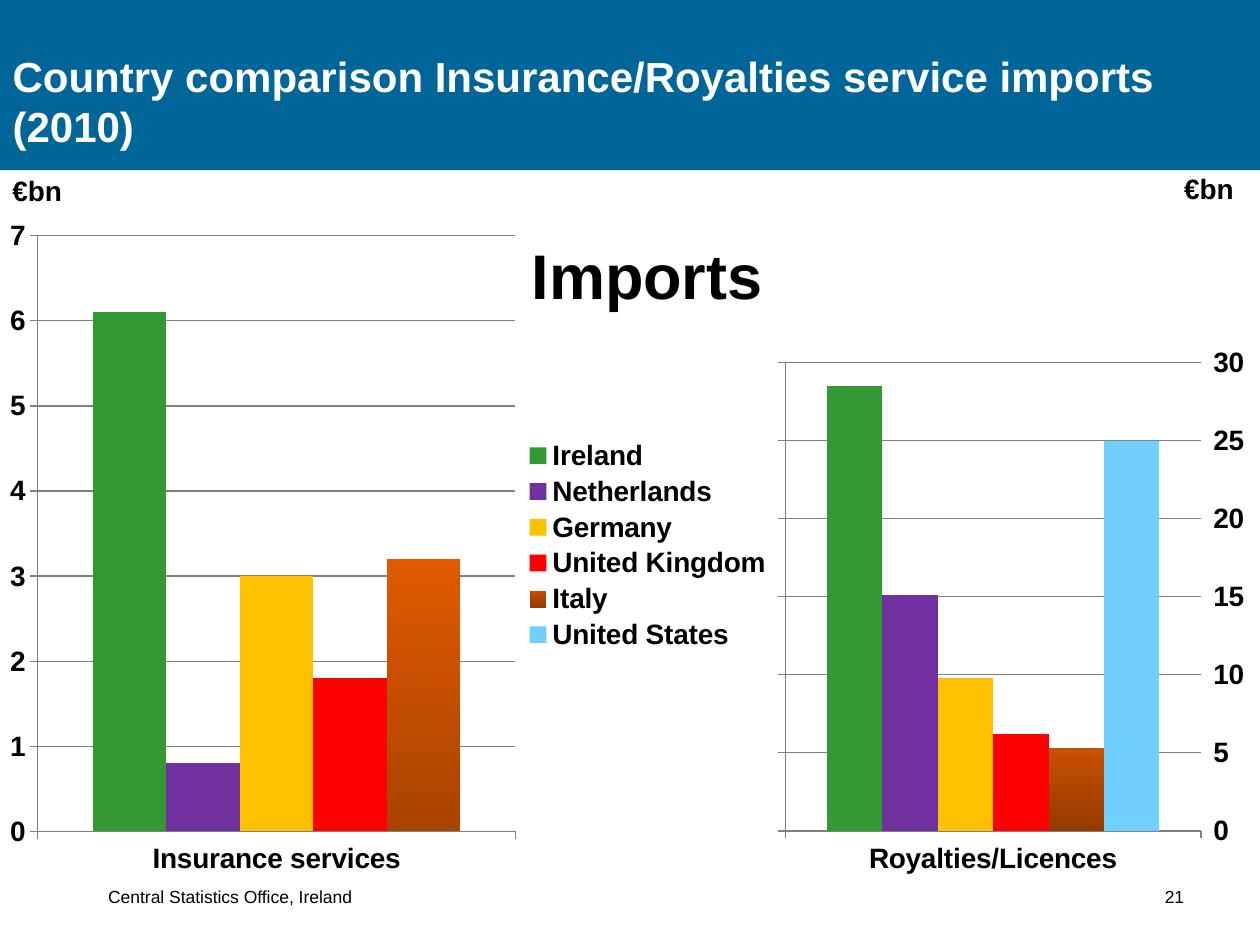
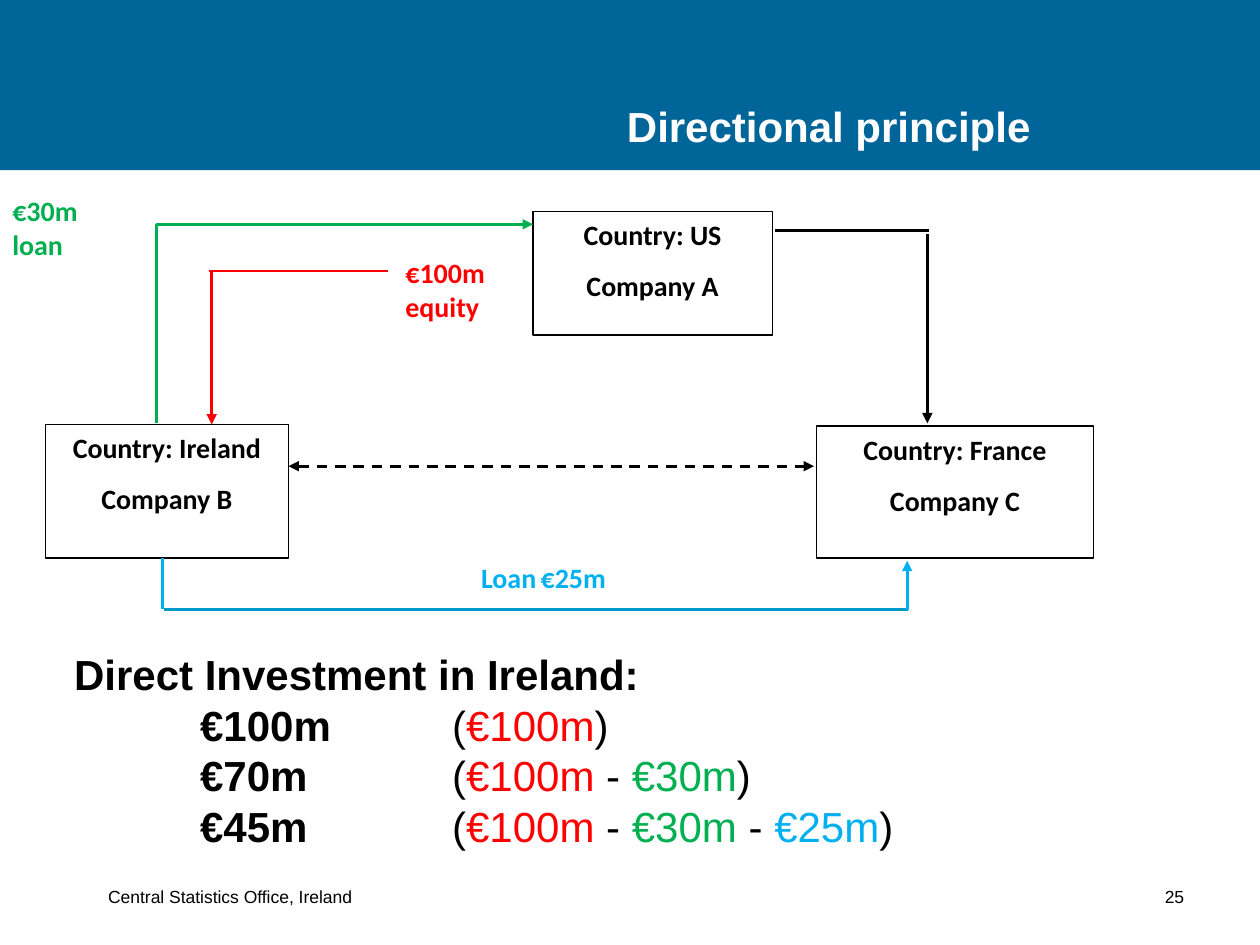
from typing import NamedTuple, Optional

from lxml import etree
from pptx import Presentation
from pptx.chart.data import CategoryChartData
from pptx.dml.color import RGBColor
from pptx.enum.chart import XL_CHART_TYPE as ChartType, XL_LEGEND_POSITION as LegendPos
from pptx.enum.chart import XL_TICK_LABEL_POSITION as LabelPos, XL_TICK_MARK as TickMark
from pptx.enum.dml import MSO_LINE
from pptx.enum.shapes import MSO_CONNECTOR, MSO_SHAPE
from pptx.enum.text import MSO_ANCHOR, MSO_AUTO_SIZE, PP_ALIGN
from pptx.oxml.ns import qn
from pptx.util import Inches, Pt

COLORS = {
    "band": "006699", "white": "FFFFFF", "black": "000000", "grid": "808080",
    "green": "00B050", "red": "FF0000", "blue": "00B0F0", "teal": "0099CC",
}
COUNTRIES = {
    "Ireland": "339933", "Netherlands": "7030A0", "Germany": "FFC000",
    "United Kingdom": "FF0000", "Italy": "E75C00", "United States": "70CFFF",
}
FOOTER = "Central Statistics Office, Ireland"


class Box(NamedTuple):
    left: float
    top: float
    width: float
    height: float

    def emu(self) -> list:
        return [Inches(v) for v in self]


class Run(NamedTuple):
    text: str
    color: str = "black"
    bold: bool = False
    size: float = 24


class ColumnChart(NamedTuple):
    box: Box
    category: str
    values: tuple
    maximum: float
    unit: float
    plot: tuple
    gradient: tuple
    title: Optional[str] = None
    labels_right: bool = False


class Node(NamedTuple):
    box: Box
    lines: tuple


class Label(NamedTuple):
    box: Box
    runs: tuple


class Link(NamedTuple):
    start: tuple
    end: tuple
    color: str
    head: bool = False
    tail: bool = False
    dashed: bool = False


CHARTS = [
    ColumnChart(Box(0, 1.65, 4.18, 5.41), "Insurance services", (6.1, 0.8, 3, 1.8, 3.2),
                7, 1, (0.072, 0.041, 0.907, 0.874), ("E05A00", "A84300")),
    ColumnChart(Box(4.01, 1.64, 5.99, 5.41), "Royalties/Licences",
                (28.5, 15.1, 9.8, 6.2, 5.3, 25), 30, 5, (0.371, 0.229, 0.551, 0.687),
                ("C85000", "963A00"), title="Imports", labels_right=True),
]
NODES = [
    Node(Box(4.23, 1.68, 1.9, 0.98), ("Country: US", "Company A")),
    Node(Box(0.36, 3.37, 1.93, 1.06), ("Country: Ireland", "Company B")),
    Node(Box(6.48, 3.38, 2.2, 1.05), ("Country: France", "Company C")),
]
LABELS = [
    Label(Box(3.12, 1.98, 1, 0.63), (Run("€100m equity", "red", True, 16),)),
    Label(Box(0, 1.49, 1, 1.28), (Run("€30m loan", "green", True, 16),)),
    Label(Box(3.72, 4.4, 1.31, 0.35), (Run("Loan", "blue", True, 16), Run(" ", "blue", True, 11),
                                       Run("€25m", "blue", True, 16))),
]
LINKS = [
    Link((1.24, 1.78), (4.23, 1.78), "green", tail=True),
    Link((1.24, 1.78), (1.24, 3.36), "green"),
    Link((1.66, 2.15), (3.08, 2.15), "red"),
    Link((1.68, 2.15), (1.68, 3.37), "red", tail=True),
    Link((6.15, 1.83), (7.37, 1.83), "black"),
    Link((7.36, 1.86), (7.36, 3.36), "black", tail=True),
    Link((2.29, 3.7), (6.46, 3.7), "black", head=True, tail=True, dashed=True),
    Link((1.3, 4.84), (7.21, 4.84), "teal"),
    Link((1.29, 4.43), (1.29, 4.83), "blue"),
    Link((7.2, 4.84), (7.2, 4.45), "blue", tail=True),
]
EQUITY, LOAN_BACK, LOAN_SISTER = Run("€100m", "red"), Run("€30m", "green"), Run("€25m", "blue")
RESULTS = [
    ("€100m", (EQUITY,)),
    ("€70m", (EQUITY, LOAN_BACK)),
    ("€45m", (EQUITY, LOAN_BACK, LOAN_SISTER)),
]


def rgb(color: str) -> RGBColor:
    return RGBColor.from_string(COLORS.get(color, color))


def add_runs(p, runs, font: str = "Arial") -> None:
    for run in runs:
        r = p.add_run()
        r.text = run.text
        r.font.name, r.font.size, r.font.bold = font, Pt(run.size), run.bold
        r.font.color.rgb = rgb(run.color)


def add_tabs(p, *stops: tuple) -> None:
    """Set tab stops given as (inches, alignment)."""
    tabs = etree.SubElement(p._p.get_or_add_pPr(), qn("a:tabLst"))
    for position, align in stops:
        etree.SubElement(tabs, qn("a:tab"), pos=str(Inches(position)), algn=align)


def add_text(s, box: Box, runs=()):
    tf = s.shapes.add_textbox(*box.emu()).text_frame
    tf.word_wrap = True
    add_runs(tf.paragraphs[0], runs)
    return tf


def add_rect(s, box: Box, fill: str, line: Optional[str] = None):
    sp = s.shapes.add_shape(MSO_SHAPE.RECTANGLE, *box.emu())
    sp.shadow.inherit = False
    sp.fill.solid()
    sp.fill.fore_color.rgb = rgb(fill)
    if line:
        sp.line.color.rgb = rgb(line)
        sp.line.width = Pt(0.75)
    else:
        sp.line.fill.background()
    return sp


def add_slide(prs, title: str, number: int, title_box: Box, align=PP_ALIGN.LEFT):
    s = prs.slides.add_slide(prs.slide_layouts[5])
    band = add_rect(s, Box(0, 0, 10, 1.35), "band")
    s.shapes._spTree.insert(2, band._element)
    sp = s.shapes.title
    sp.left, sp.top, sp.width, sp.height = title_box.emu()
    tf = sp.text_frame
    tf.word_wrap, tf.auto_size = True, MSO_AUTO_SIZE.NONE
    tf.vertical_anchor = MSO_ANCHOR.BOTTOM
    tf.paragraphs[0].alignment = align
    add_runs(tf.paragraphs[0], [Run(title, "white", True)])

    tf = add_text(s, Box(0.76, 6.94, 8.85, 0.31))
    tf.vertical_anchor = MSO_ANCHOR.BOTTOM
    p = tf.paragraphs[0]
    p.line_spacing = 0.8
    add_tabs(p, (8.54, "r"))
    add_runs(p, [Run(f"{FOOTER}\t{number}", size=10)])
    return s


def set_layout(parent, index: int, **fractions: float) -> None:
    """Fix a chart part by fractions of the chart's size."""
    layout = parent.find(qn("c:layout"))
    if layout is None:
        layout = etree.Element(qn("c:layout"))
        parent.insert(index, layout)
    manual = etree.SubElement(layout, qn("c:manualLayout"))
    if "w" in fractions:
        etree.SubElement(manual, qn("c:layoutTarget"), val="inner")
    for mode in ("xMode", "yMode"):
        etree.SubElement(manual, qn(f"c:{mode}"), val="edge")
    for name, value in fractions.items():
        etree.SubElement(manual, qn(f"c:{name}"), val=str(value))


def style_font(font, size: float) -> None:
    font.name, font.size, font.bold = "Arial", Pt(size), True
    font.color.rgb = rgb("black")


def style_axis(axis) -> None:
    axis.major_tick_mark, axis.minor_tick_mark = TickMark.OUTSIDE, TickMark.NONE
    axis.format.line.color.rgb = rgb("grid")
    style_font(axis.tick_labels.font, 16)


def add_column_chart(s, spec: ColumnChart) -> None:
    data = CategoryChartData(number_format="0.0")
    data.categories = [spec.category]
    for country, value in zip(COUNTRIES, spec.values):
        data.add_series(country, [value])
    chart = s.shapes.add_chart(ChartType.COLUMN_CLUSTERED, *spec.box.emu(), data).chart
    style_font(chart.font, 16)
    plot = chart.plots[0]
    plot.gap_width, plot.overlap, plot.vary_by_categories = 150, 0, False
    for series in plot.series:
        fill = series.format.fill
        if series.name == "Italy":
            fill.gradient()
            fill.gradient_angle = 270
            for stop, color in zip(fill.gradient_stops, spec.gradient):
                stop.color.rgb = rgb(color)
        else:
            fill.solid()
            fill.fore_color.rgb = rgb(COUNTRIES[series.name])

    axis = chart.value_axis
    style_axis(axis)
    style_axis(chart.category_axis)
    axis.minimum_scale, axis.maximum_scale, axis.major_unit = 0, spec.maximum, spec.unit
    axis.major_gridlines.format.line.color.rgb = rgb("grid")
    axis.tick_labels.number_format = "#,##0"
    axis.tick_labels.number_format_is_linked = False
    if spec.labels_right:
        axis.tick_label_position = LabelPos.HIGH
    set_layout(chart._chartSpace.chart.plotArea, 0, **dict(zip("xywh", spec.plot)))

    chart.has_title = chart.has_legend = spec.title is not None
    if spec.title:
        title = chart.chart_title
        add_runs(title.text_frame.paragraphs[0], [Run(spec.title, bold=True, size=36)])
        set_layout(title._element, 1, x=0.02, y=0.025)
        legend = chart.legend
        legend.position, legend.include_in_layout = LegendPos.LEFT, False
        style_font(legend.font, 16)
        set_layout(legend._element, 1, x=0.02, y=0.335)


def add_box_text(s, box: Box, lines, align, line: Optional[str] = None) -> None:
    tf = add_rect(s, box, "white", line).text_frame
    tf.word_wrap, tf.vertical_anchor = True, MSO_ANCHOR.TOP
    for i, runs in enumerate(lines):
        p = tf.add_paragraph() if i else tf.paragraphs[0]
        p.alignment, p.space_after = align, Pt(10)
        add_runs(p, runs, "Calibri")


def add_link(s, link: Link) -> None:
    points = [Inches(v) for v in link.start + link.end]
    cn = s.shapes.add_connector(MSO_CONNECTOR.STRAIGHT, *points)
    cn.line.color.rgb = rgb(link.color)
    cn.line.width = Pt(1.5)
    if link.dashed:
        cn.line.dash_style = MSO_LINE.DASH
    for tag, shown in (("a:headEnd", link.head), ("a:tailEnd", link.tail)):
        if shown:
            etree.SubElement(cn.line._get_or_add_ln(), qn(tag), type="triangle")
    etree.SubElement(cn._element.spPr, qn("a:effectLst"))


def add_results(s) -> None:
    tf = add_text(s, Box(0.49, 5.1, 8.89, 1.72), [Run("Direct Investment in Ireland:", bold=True)])
    for total, terms in RESULTS:
        p = tf.add_paragraph()
        add_tabs(p, (1, "l"), (3, "l"))
        runs = [Run(f"\t{total}", bold=True), Run("\t(")]
        for i, term in enumerate(terms):
            runs += [Run(" - "), term] if i else [term]
        add_runs(p, runs + [Run(")")])


def build_imports(prs) -> None:
    s = add_slide(prs, "Country comparison Insurance/Royalties service imports (2010)", 21,
                  Box(0, 0, 10, 1.25))
    for spec in CHARTS:
        add_column_chart(s, spec)
    for box in (Box(0, 1.33, 1, 0.6), Box(9.3, 1.31, 0.7, 0.6)):
        add_text(s, box, [Run("€bn", bold=True, size=16)])


def build_directional(prs) -> None:
    s = add_slide(prs, "Directional principle", 25, Box(2.82, 0, 5.46, 1.25), PP_ALIGN.RIGHT)
    for node in NODES:
        lines = [[Run(text, bold=True, size=16)] for text in node.lines]
        add_box_text(s, node.box, lines, PP_ALIGN.CENTER, "black")
    for label in LABELS:
        add_box_text(s, label.box, [label.runs], PP_ALIGN.LEFT)
    for link in LINKS:
        add_link(s, link)
    add_results(s)


def main() -> None:
    prs = Presentation()
    prs.slide_width, prs.slide_height = Inches(10), Inches(7.5)
    build_imports(prs)
    build_directional(prs)
    prs.save("out.pptx")


if __name__ == "__main__":
    main()
